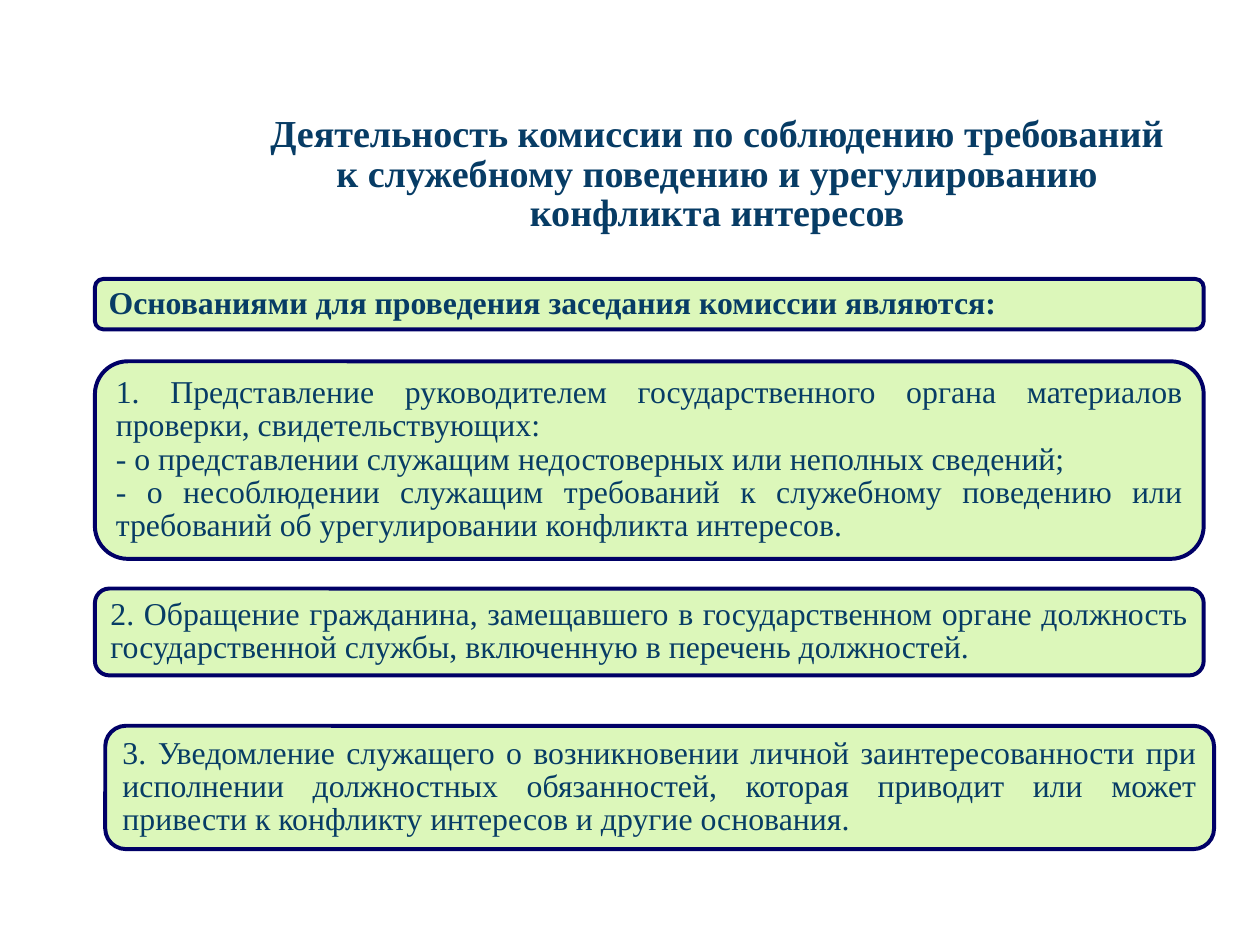
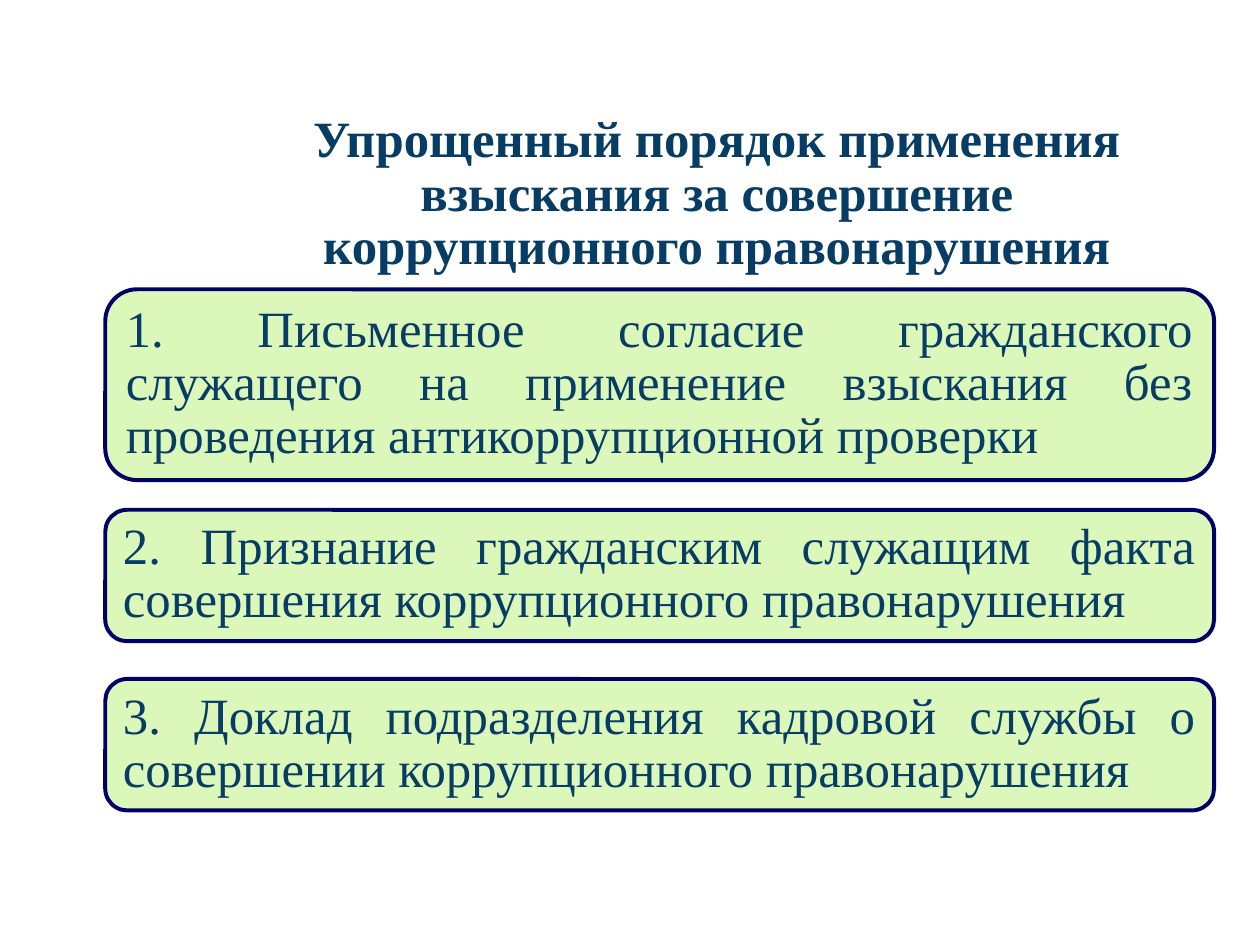
from dataclasses import dataclass

from pptx import Presentation
from pptx import util as u
from pptx.dml.color import RGBColor
from pptx.enum import shapes, text

FONT = "Times New Roman"
INK, PANEL, BORDER = "073C65", "DCF7BA", "000066"
LINE_SPACING = 0.87
PANEL_WIDTH = 24.64
LEFT, LEFT_INDENTED = 2.11, 2.34
TITLE_ONLY = 5


@dataclass(frozen=True)
class Panel:
    """A rounded panel; lengths in centimetres."""
    left: float
    top: float
    height: float
    lines: tuple[str, ...]
    bold: bool = False


@dataclass(frozen=True)
class Page:
    title: tuple[str, ...]
    title_size: int
    title_height: float
    text_size: int
    panels: tuple[Panel, ...]


PAGES = (
    Page(
        ("Деятельность комиссии по соблюдению требований",
         "к служебному поведению и урегулированию",
         "конфликта интересов"),
        24, 3.99, 20,
        (
            Panel(LEFT, 6.2, 1.12,
                  ("Основаниями для проведения заседания комиссии являются:",), bold=True),
            Panel(LEFT, 8.03, 4.39,
                  ("1. Представление руководителем государственного органа материалов "
                   "проверки, свидетельствующих:",
                   "- о представлении служащим недостоверных или неполных сведений;",
                   "- о несоблюдении служащим требований к служебному поведению или "
                   "требований об урегулировании конфликта интересов.")),
            Panel(LEFT, 13.08, 1.93,
                  ("2. Обращение гражданина, замещавшего в государственном органе должность "
                   "государственной службы, включенную в перечень должностей.",)),
            Panel(LEFT_INDENTED, 16.13, 2.74,
                  ("3. Уведомление служащего о возникновении личной заинтересованности при "
                   "исполнении должностных обязанностей, которая приводит или может "
                   "привести к конфликту интересов и другие основания.",)),
        ),
    ),
    Page(
        ("Упрощенный порядок применения взыскания за совершение "
         "коррупционного правонарушения",),
        32, 5.03, 32,
        (
            Panel(LEFT_INDENTED, 6.43, 4.24,
                  ("1. Письменное согласие гражданского служащего на применение взыскания "
                   "без проведения антикоррупционной проверки",)),
            Panel(LEFT_INDENTED, 11.33, 2.92,
                  ("2. Признание гражданским служащим факта совершения "
                   "коррупционного правонарушения",)),
            Panel(LEFT_INDENTED, 15.09, 2.92,
                  ("3. Доклад подразделения кадровой службы о совершении "
                   "коррупционного правонарушения",)),
        ),
    ),
)


def color(value: str) -> RGBColor:
    return RGBColor.from_string(value)


def write(frame, lines: tuple[str, ...], size: int, bold: bool, align, anchor) -> None:
    frame.word_wrap = True
    frame.auto_size = text.MSO_AUTO_SIZE.NONE
    frame.vertical_anchor = anchor
    frame.text = "\n".join(lines)
    for para in frame.paragraphs:
        para.alignment = align
        para.line_spacing = LINE_SPACING
        para.space_before = u.Pt(0)
        para.font.name = FONT
        para.font.size = u.Pt(size)
        para.font.bold = bold
        para.font.color.rgb = color(INK)


def set_title(slide, page: Page) -> None:
    title = slide.shapes.title
    title.left, title.top = u.Cm(4.9), u.Cm(2.44)
    title.width, title.height = u.Cm(22.07), u.Cm(page.title_height)
    write(title.text_frame, page.title, page.title_size, True,
          text.PP_ALIGN.CENTER, text.MSO_ANCHOR.TOP)


def add_panel(slide, panel: Panel, size: int) -> None:
    box = slide.shapes.add_shape(
        shapes.MSO_SHAPE.ROUNDED_RECTANGLE,
        u.Cm(panel.left), u.Cm(panel.top), u.Cm(PANEL_WIDTH), u.Cm(panel.height))
    box.shadow.inherit = False
    box.fill.solid()
    box.fill.fore_color.rgb = color(PANEL)
    box.line.color.rgb = color(BORDER)
    box.line.width = u.Pt(2.5)
    write(box.text_frame, panel.lines, size, panel.bold,
          text.PP_ALIGN.JUSTIFY, text.MSO_ANCHOR.MIDDLE)


def main() -> None:
    deck = Presentation()
    deck.slide_width, deck.slide_height = u.Cm(28), u.Cm(21)
    for page in PAGES:
        slide = deck.slides.add_slide(deck.slide_layouts[TITLE_ONLY])
        set_title(slide, page)
        for panel in page.panels:
            add_panel(slide, panel, page.text_size)
    deck.save("out.pptx")


if __name__ == "__main__":
    main()
